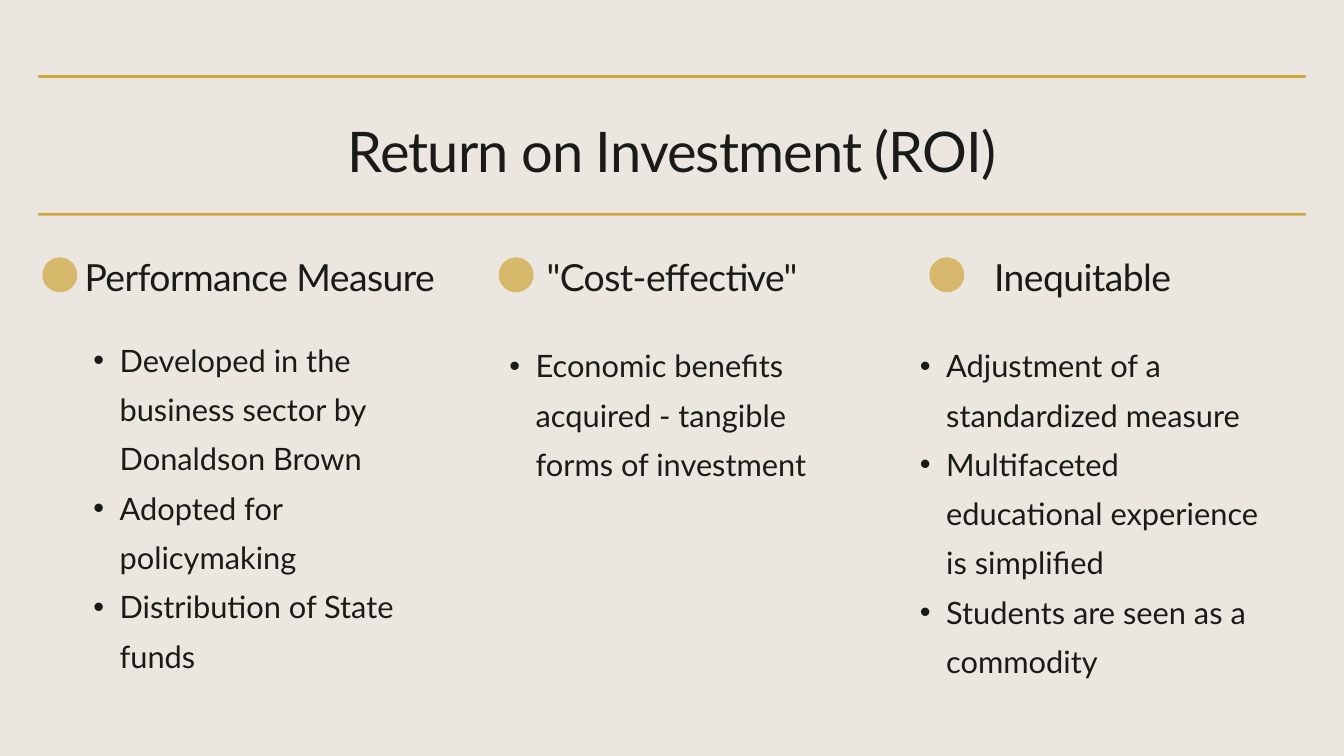
from dataclasses import dataclass

from lxml import etree
from pptx import Presentation
from pptx.dml.color import RGBColor
from pptx.enum.shapes import MSO_SHAPE
from pptx.enum.text import MSO_ANCHOR, MSO_AUTO_SIZE, PP_ALIGN
from pptx.oxml.ns import qn
from pptx.util import Inches, Pt

RECT, OVAL = MSO_SHAPE.RECTANGLE, MSO_SHAPE.OVAL
CENTER, LEFT = PP_ALIGN.CENTER, PP_ALIGN.LEFT

PAPER = RGBColor(0xEB, 0xE7, 0xE0)
GOLD = RGBColor(0xCD, 0xA6, 0x3C)
INK = RGBColor(0x1A, 0x1B, 0x18)

COLS, ROWS = 20, 11.25
UNIT = Inches(1)
MARGIN = 0.57
RULE_ROWS = (1.12, 3.17)
HEAD_ROW, DOT_ROW = 3.76, 3.83
COLUMN_WIDTH, DOT_SIZE = 5.62, 0.52
BULLET_INDENT = 0.39

FRAME = dict(margin_left=0, margin_top=0, margin_right=0, margin_bottom=0,
             word_wrap=True, auto_size=MSO_AUTO_SIZE.NONE,
             vertical_anchor=MSO_ANCHOR.TOP)


@dataclass(frozen=True)
class Style:
    size: float
    leading: float
    align: PP_ALIGN
    tracking: float = 0
    bulleted: bool = False


@dataclass(frozen=True)
class Column:
    heading: str
    points: tuple[str, ...]
    left: float
    dot_left: float
    list_row: float
    heading_inset: float = 0


TITLE = Style(60, 81.2, CENTER, -1)
HEADING = Style(40, 50, CENTER, -0.6)
POINT = Style(33, 52.8, LEFT, bulleted=True)

COLUMNS = (
    Column("Performance Measure",
           ("Developed in the business sector by Donaldson Brown",
            "Adopted for policymaking",
            "Distribution of State funds"),
           1, 0.63, 4.9, 0.11),
    Column('"Cost-effective"',
           ("Economic benefits acquired - tangible forms of investment",),
           7.19, 7.42, 4.98),
    Column("Inequitable",
           ("Adjustment of a standardized measure",
            "Multifaceted educational experience is simplified",
            "Students are seen as a commodity"),
           13.3, 13.83, 4.98),
)


def grid(*cells: float) -> list[int]:
    return [round(c * UNIT) for c in cells]


def set_attrs(target, values: dict) -> None:
    for name, value in values.items():
        setattr(target, name, value)


def add_bullet(p) -> None:
    p.level = 1
    pPr = p._p.get_or_add_pPr()
    indent = round(BULLET_INDENT * UNIT)
    pPr.set("marL", str(2 * indent))
    pPr.set("indent", str(-indent))
    etree.SubElement(pPr, qn("a:buFont")).set("typeface", "Arial")
    etree.SubElement(pPr, qn("a:buChar")).set("char", "•")


def write(sp, texts: tuple[str, ...], style: Style, inset: float = 0) -> None:
    tf = sp.text_frame
    set_attrs(tf, FRAME | dict(margin_left=round(inset * UNIT)))
    for i, text in enumerate(texts):
        p = tf.add_paragraph() if i else tf.paragraphs[0]
        set_attrs(p, dict(alignment=style.align, line_spacing=Pt(style.leading),
                          space_before=Pt(0), space_after=Pt(0)))
        if style.bulleted:
            add_bullet(p)
        r = p.add_run()
        r.text = text
        set_attrs(r.font, dict(name="Lato", size=Pt(style.size), bold=False))
        r.font.color.rgb = INK
        if style.tracking:
            r._r.get_or_add_rPr().set("spc", str(round(style.tracking * 100)))


def add_gold(s, kind: MSO_SHAPE, box: list[int], opacity: int = 100) -> None:
    sp = s.shapes.add_shape(kind, *box)
    sp.shadow.inherit = False
    sp.fill.solid()
    sp.fill.fore_color.rgb = GOLD
    sp.line.fill.background()
    if opacity < 100:
        color = sp._element.spPr.find(f".//{qn('a:srgbClr')}")
        etree.SubElement(color, qn("a:alpha")).set("val", str(opacity * 1000))


def add_column(s, column: Column) -> None:
    head = s.shapes.add_textbox(*grid(column.left, HEAD_ROW, COLUMN_WIDTH, 0.78))
    write(head, (column.heading,), HEADING, column.heading_inset)
    height = 5.12 if len(column.points) > 1 else 2.19
    body = s.shapes.add_textbox(
        *grid(column.left, column.list_row, COLUMN_WIDTH, height))
    write(body, column.points, POINT)
    add_gold(s, OVAL, grid(column.dot_left, DOT_ROW, DOT_SIZE, DOT_SIZE), 72)


def main() -> None:
    prs = Presentation()
    prs.slide_width, prs.slide_height = grid(COLS, ROWS)
    s = prs.slides.add_slide(prs.slide_layouts[5])
    s.background.fill.solid()
    s.background.fill.fore_color.rgb = PAPER

    width = COLS - 2 * MARGIN
    title = s.shapes.title
    left, top, w, h = grid(MARGIN, 1.6, width, 1.05)
    set_attrs(title, dict(left=left, top=top, width=w, height=h))
    write(title, ("Return on Investment (ROI)",), TITLE)
    for row in RULE_ROWS:
        add_gold(s, RECT, grid(MARGIN, row, width, 0.04))
    for column in COLUMNS:
        add_column(s, column)
    prs.save("out.pptx")


if __name__ == "__main__":
    main()
